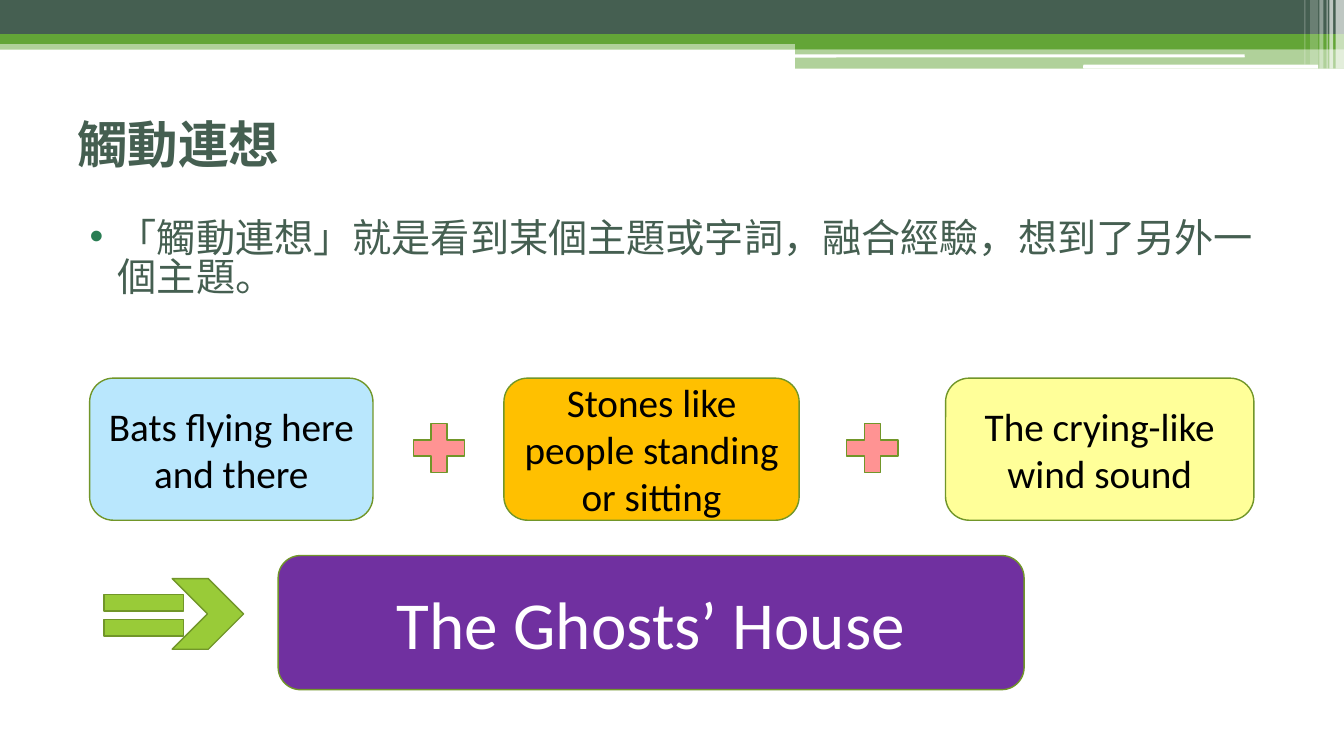
from lxml import etree
from pptx import Presentation
from pptx.dml.color import RGBColor
from pptx.enum.shapes import MSO_SHAPE
from pptx.enum.text import MSO_ANCHOR, PP_ALIGN
from pptx.oxml.ns import qn
from pptx.util import Cm, Pt

RECT = MSO_SHAPE.RECTANGLE
ROUNDED = MSO_SHAPE.ROUNDED_RECTANGLE
PLUS = MSO_SHAPE.MATH_PLUS
EQUAL = MSO_SHAPE.MATH_EQUAL
CHEVRON = MSO_SHAPE.CHEVRON
MIDDLE, TOP = MSO_ANCHOR.MIDDLE, MSO_ANCHOR.TOP
LEFT, CENTER = PP_ALIGN.LEFT, PP_ALIGN.CENTER

LATIN_FONT, CHINESE_FONT = "Calibri", "Noto Sans CJK TC"
DARK, GREEN, WHITE, BLACK = "455F51", "63A537", "FFFFFF", "000000"
OUTLINE, LIME, PINK, BULLET = "719629", "99CB38", "FF9393", "297D53"
SLIDE_WIDTH, SLIDE_HEIGHT = 33.87, 19.05
IDEA_TOP, IDEA_HEIGHT = 9.53, 3.58


def rgb(hex_color):
    return RGBColor.from_string(hex_color)


def place(shape, left, top, width, height):
    shape.left, shape.top = Cm(left), Cm(top)
    shape.width, shape.height = Cm(width), Cm(height)


def write(shape, text, *, size, color, font=LATIN_FONT, bold=False,
          align=CENTER, anchor=MIDDLE):
    frame = shape.text_frame
    frame.word_wrap = True
    frame.vertical_anchor = anchor
    paragraph = frame.paragraphs[0]
    paragraph.alignment = align
    run = paragraph.add_run()
    run.text = text
    run.font.name, run.font.size, run.font.bold = font, Pt(size), bold
    run.font.color.rgb = rgb(color)
    properties = run.font._element
    east_asian = etree.Element(qn("a:ea"), typeface=font)
    properties.find(qn("a:latin")).addnext(east_asian)
    return paragraph


def add_figure(slide, kind, box, fill, line=None, opacity=100):
    figure = slide.shapes.add_shape(kind, *(Cm(length) for length in box))
    figure.shadow.inherit = False
    figure.fill.solid()
    figure.fill.fore_color.rgb = rgb(fill)
    if opacity < 100:
        color = figure.fill._xPr.find(".//" + qn("a:srgbClr"))
        etree.SubElement(color, qn("a:alpha"), val=str(opacity * 1000))
    if line:
        figure.line.color.rgb = rgb(line)
        figure.line.width = Pt(1)
    else:
        figure.line.fill.background()
    return figure


def add_bullet(paragraph, color, indent, hanging):
    properties = paragraph._p.get_or_add_pPr()
    properties.set("marL", str(Cm(indent)))
    properties.set("indent", str(-Cm(hanging)))
    bullet_color = etree.SubElement(properties, qn("a:buClr"))
    etree.SubElement(bullet_color, qn("a:srgbClr"), val=color)
    etree.SubElement(properties, qn("a:buFont"), typeface="Arial")
    etree.SubElement(properties, qn("a:buChar"), char="•")


def add_header(slide):
    # Horizontal bands
    half = 20.04
    for kind, box, fill, opacity in [
        (RECT, (0, 1.02, SLIDE_WIDTH, 0.23), GREEN, 50),
        (RECT, (0, 0, SLIDE_WIDTH, 0.86), DARK, 100),
        (RECT, (0, 0.86, SLIDE_WIDTH, 0.25), GREEN, 100),
        (RECT, (half, 0.99, SLIDE_WIDTH - half, 0.25), GREEN, 100),
        (RECT, (half, 1.22, SLIDE_WIDTH - half, 0.51), GREEN, 50),
        (ROUNDED, (20.02, 1.37, 11.35, 0.08), WHITE, 100),
        (ROUNDED, (27.3, 1.63, 5.92, 0.1), WHITE, 100),
    ]:
        add_figure(slide, kind, box, fill, opacity=opacity)

    # Vertical stripes at the right edge
    for left, width, height, opacity in [
        (33.66, 0.21, 1.73, 65),
        (33.5, 0.1, 1.73, 65),
        (33.43, 0.03, 1.73, 60),
        (33.25, 0.1, 1.73, 40),
        (33.02, 0.2, 1.63, 20),
        (32.87, 0.03, 1.63, 30),
    ]:
        add_figure(slide, RECT, (left, 0, width, height), WHITE, opacity=opacity)


def add_card(slide, text, box, fill, size, color):
    card = add_figure(slide, ROUNDED, box, fill, OUTLINE)
    write(card, text, size=size, color=color)


def main():
    deck = Presentation()
    deck.slide_width, deck.slide_height = Cm(SLIDE_WIDTH), Cm(SLIDE_HEIGHT)
    slide = deck.slides.add_slide(deck.slide_layouts[5])
    add_header(slide)

    # Title
    title = slide.shapes.title
    place(title, 1.7, 2.13, 30.48, 2.97)
    write(title, "觸動連想", size=36, color=DARK, font=CHINESE_FONT,
          bold=True, align=LEFT)

    # Definition
    definition = slide.shapes.add_textbox(Cm(1.7), Cm(5.44), Cm(30.48), Cm(12.8))
    paragraph = write(
        definition,
        "「觸動連想」就是看到某個主題或字詞，融合經驗，想到了另外一個主題。",
        size=28, color=DARK, font=CHINESE_FONT, align=LEFT, anchor=TOP)
    paragraph.space_before = Pt(3)
    paragraph.line_spacing = 0.83
    add_bullet(paragraph, BULLET, indent=1.02, hanging=0.71)

    # Ideas joined by plus signs
    for text, left, width, fill in [
        ("Bats flying here and there", 2.26, 7.14, "B9E7FD"),
        ("Stones like people standing or sitting", 12.7, 7.44, "FFC000"),
        ("The crying-like wind sound", 23.83, 7.77, "FFFF99"),
    ]:
        box = (left, IDEA_TOP, width, IDEA_HEIGHT)
        add_card(slide, text, box, fill, 28, BLACK)
    for left in (10.19, 21.11):
        add_figure(slide, PLUS, (left, 10.44, 1.75, 1.7), PINK, OUTLINE)

    # Resulting idea
    add_figure(slide, EQUAL, (2.26, 14.61, 2.72, 1.78), LIME, OUTLINE)
    add_card(slide, "The Ghosts’ House", (7.01, 14, 18.8, 3.38), "7030A0", 48, WHITE)
    add_figure(slide, CHEVRON, (4.34, 14.58, 1.8, 1.78), LIME, OUTLINE)

    deck.save("out.pptx")


if __name__ == "__main__":
    main()
